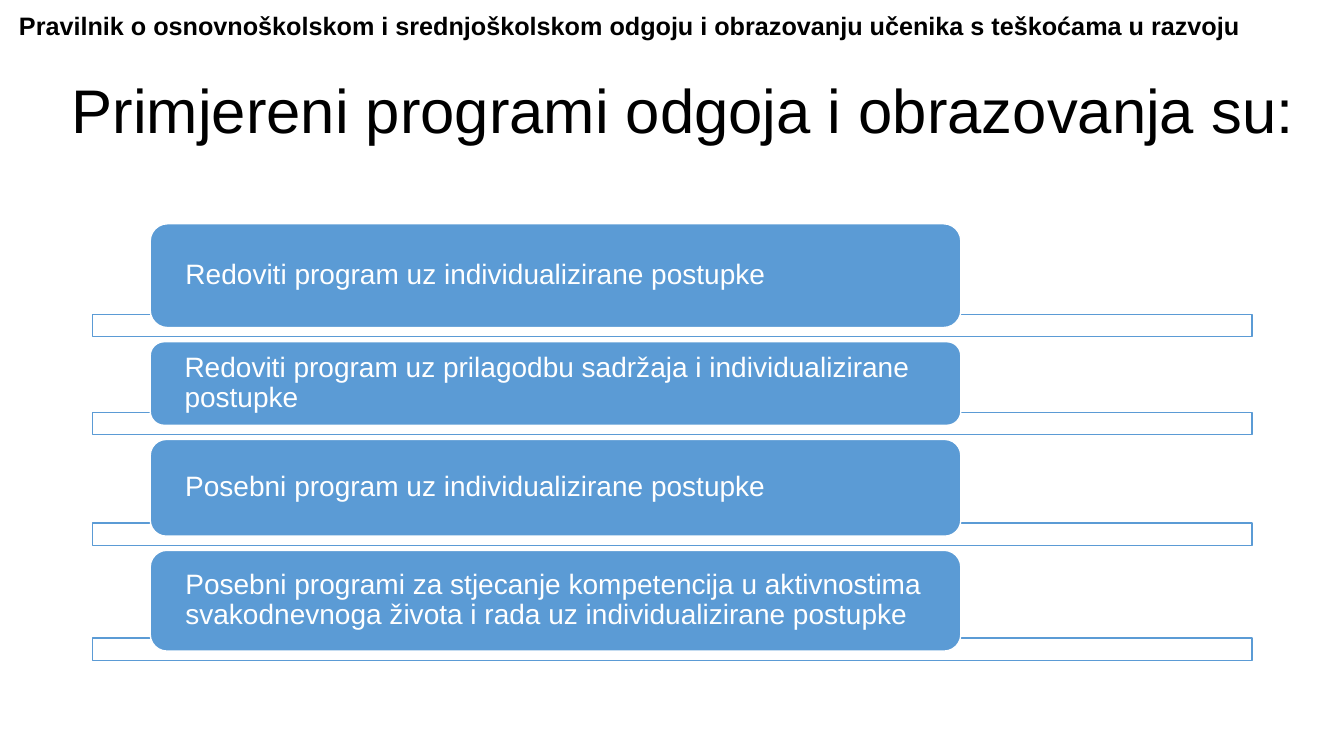
from lxml import etree
from pptx import Presentation
from pptx import util as u
from pptx.dml.color import RGBColor
from pptx.enum import shapes, text
from pptx.oxml.ns import qn

REGULATION = ("Pravilnik o osnovnoškolskom i srednjoškolskom odgoju i obrazovanju "
              "učenika s teškoćama u razvoju")
HEADING = "Primjereni programi odgoja i obrazovanja su:"
# Programme and the height of its card in inches
PROGRAMMES = [
    ("Redoviti program uz individualizirane postupke", 1.03),
    ("Redoviti program uz prilagodbu sadržaja i individualizirane postupke", 0.83),
    ("Posebni program uz individualizirane postupke", 0.96),
    ("Posebni programi za stjecanje kompetencija u aktivnostima svakodnevnoga "
     "života i rada uz individualizirane postupke", 1.0),
]

BLUE = RGBColor(0x5B, 0x9B, 0xD5)
WHITE = RGBColor(0xFF, 0xFF, 0xFF)
BLACK = RGBColor(0, 0, 0)

SLIDE_W, SLIDE_H = 13.33, 7.5
CARD_LEFT, CARD_W, FIRST_TOP, CARD_GAP = 1.49, 8.04, 2.22, 0.14
BAR_LEFT, BAR_W, BAR_H, OVERLAP = 0.92, 11.5, 0.22, 0.13


def write(shape, words, size, color, bold=False, spacing=None, inset=0.1,
          inset_y=0.05, anchor=text.MSO_ANCHOR.MIDDLE):
    frame = shape.text_frame
    frame.word_wrap = True
    frame.auto_size = text.MSO_AUTO_SIZE.NONE
    frame.vertical_anchor = anchor
    frame.margin_left = frame.margin_right = u.Inches(inset)
    frame.margin_top = frame.margin_bottom = u.Inches(inset_y)
    paragraph = frame.paragraphs[0]
    paragraph.alignment = text.PP_ALIGN.LEFT
    paragraph.line_spacing = spacing
    run = paragraph.add_run()
    run.text = words
    run.font.name, run.font.size, run.font.bold = "Arial", u.Pt(size), bold
    run.font.color.rgb = color


def add_block(slide, preset, box, fill, line):
    block = slide.shapes.add_shape(preset, *map(u.Inches, box))
    block.shadow.inherit = False
    block.fill.solid()
    block.fill.fore_color.rgb = fill
    block.line.color.rgb = line
    block.line.width = u.Pt(1)
    return block


def add_programme(slide, words, top, height):
    """Draw a card over the bar that runs behind its lower edge."""
    bar = add_block(slide, shapes.MSO_SHAPE.RECTANGLE,
                    (BAR_LEFT, top + height - OVERLAP, BAR_W, BAR_H), WHITE, BLUE)
    bar_color = bar.fill._xPr.find(qn("a:solidFill"))[0]
    etree.SubElement(bar_color, qn("a:alpha"), val="90000")
    card = add_block(slide, shapes.MSO_SHAPE.ROUNDED_RECTANGLE,
                     (CARD_LEFT, top, CARD_W, height), BLUE, WHITE)
    write(card, words, 20, WHITE, spacing=0.9, inset=0.3, inset_y=0)


def main():
    deck = Presentation()
    deck.slide_width, deck.slide_height = u.Inches(SLIDE_W), u.Inches(SLIDE_H)
    slide = deck.slides.add_slide(deck.slide_layouts[5])

    heading = slide.shapes.title
    heading.left, heading.top = u.Inches(0.61), u.Inches(0.4)
    heading.width, heading.height = u.Inches(12.35), u.Inches(1.45)
    write(heading, HEADING, 44, BLACK, spacing=0.9)

    top = FIRST_TOP
    for words, height in PROGRAMMES:
        add_programme(slide, words, top, height)
        top += height + CARD_GAP

    regulation = slide.shapes.add_textbox(*map(u.Inches, (0.09, 0.05, 12.33, 0.4)))
    write(regulation, REGULATION, 18, BLACK, bold=True, anchor=text.MSO_ANCHOR.TOP)
    deck.save("out.pptx")


if __name__ == "__main__":
    main()
